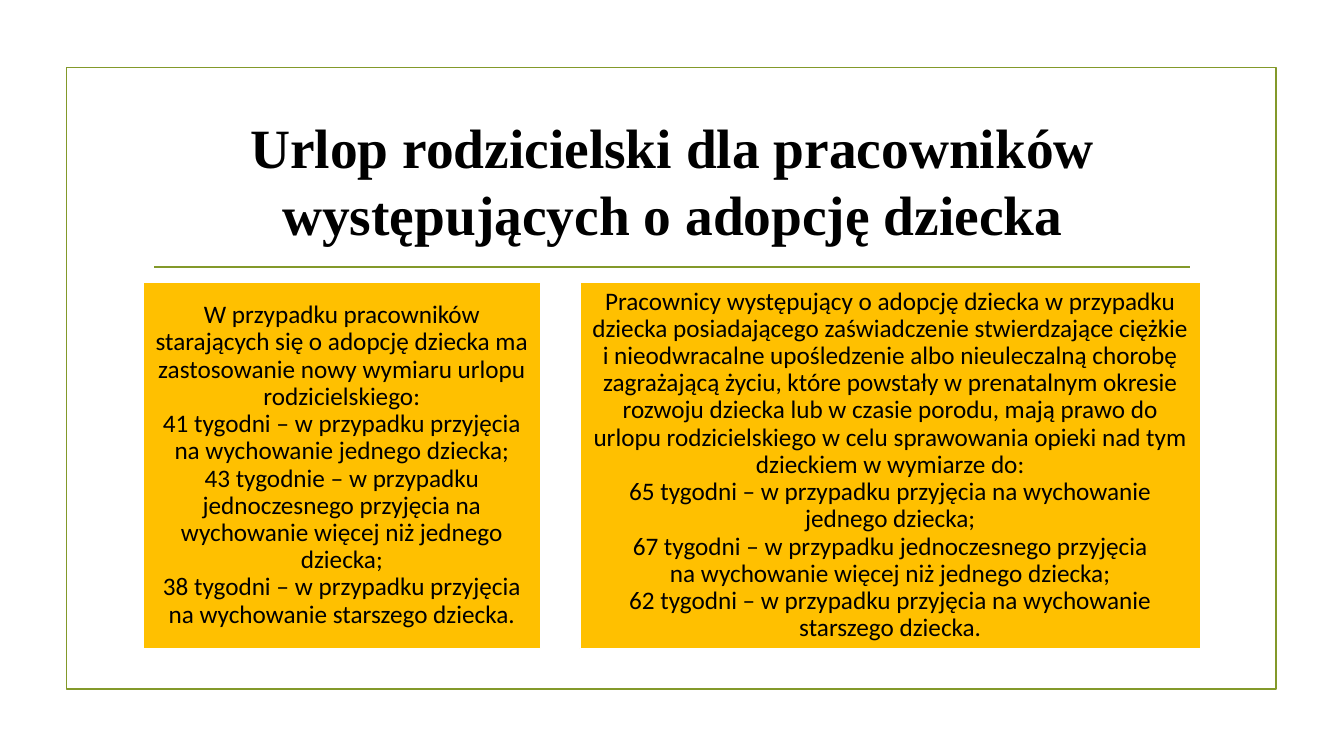
from pptx import Presentation
from pptx.dml.color import RGBColor
from pptx.enum.shapes import MSO_CONNECTOR, MSO_SHAPE
from pptx.enum.text import MSO_ANCHOR, PP_ALIGN
from pptx.oxml.ns import qn
from pptx.util import Cm, Pt
from lxml.etree import SubElement

TITLE = "Urlop rodzicielski dla pracowników występujących o adopcję dziecka"
# Each panel: width in cm, lines of text
PANELS = [
    (10.01, [
        "W przypadku pracowników starających się o adopcję dziecka ma zastosowanie "
        "nowy wymiaru urlopu rodzicielskiego:",
        "41 tygodni ‒ w przypadku przyjęcia na wychowanie jednego dziecka;",
        "43 tygodnie ‒ w przypadku jednoczesnego przyjęcia na wychowanie "
        "więcej niż jednego dziecka;",
        "38 tygodni ‒ w przypadku przyjęcia na wychowanie starszego dziecka.",
    ]),
    (15.65, [
        "Pracownicy występujący o adopcję dziecka w przypadku dziecka posiadającego "
        "zaświadczenie stwierdzające ciężkie i nieodwracalne upośledzenie albo "
        "nieuleczalną chorobę zagrażającą życiu, które powstały w prenatalnym okresie "
        "rozwoju dziecka lub w czasie porodu, mają prawo do urlopu rodzicielskiego "
        "w celu sprawowania opieki nad tym dzieckiem w wymiarze do:",
        "65 tygodni – w przypadku przyjęcia na wychowanie jednego dziecka;",
        "67 tygodni – w przypadku jednoczesnego przyjęcia",
        "na wychowanie więcej niż jednego dziecka;",
        "62 tygodni – w przypadku przyjęcia na wychowanie starszego dziecka.",
    ]),
]

GREEN = RGBColor(0x83, 0x99, 0x2A)
AMBER = RGBColor(0xFF, 0xC0, 0x00)
WHITE = RGBColor(0xFF, 0xFF, 0xFF)
BLACK = RGBColor(0x00, 0x00, 0x00)
LINE_WIDTH = Pt(1.25)
CONTENT_LEFT, CONTENT_WIDTH = 3.61, 26.67
PANEL_TOP, PANEL_HEIGHT, PANEL_GAP = 7.11, 9.23, 0.99


def add_rectangle(page, left, top, width, height, line_color):
    box = page.shapes.add_shape(
        MSO_SHAPE.RECTANGLE, Cm(left), Cm(top), Cm(width), Cm(height))
    box.shadow.inherit = False
    box.line.color.rgb = line_color
    box.line.width = LINE_WIDTH
    return box


def write_lines(box, lines, font_name, size, bold=False, spacing=1.0):
    """Fill the box with one centred paragraph, broken after each line."""
    frame = box.text_frame
    frame.word_wrap = True
    frame.vertical_anchor = MSO_ANCHOR.MIDDLE
    para = frame.paragraphs[0]
    para.alignment = PP_ALIGN.CENTER
    para.line_spacing = spacing
    for index, line in enumerate(lines):
        if index:
            para.add_line_break()
        span = para.add_run()
        span.text = line
        span.font.name = font_name
        span.font.size = Pt(size)
        span.font.bold = bold
        span.font.color.rgb = BLACK
    return frame


deck = Presentation()
deck.slide_width, deck.slide_height = Cm(33.87), Cm(19.05)
page = deck.slides.add_slide(deck.slide_layouts[6])

border = add_rectangle(page, 1.68, 1.7, 30.48, 15.67, GREEN)
border.fill.background()

rule = page.shapes.add_connector(
    MSO_CONNECTOR.STRAIGHT, Cm(3.89), Cm(6.73), Cm(30), Cm(6.73))
rule.line.color.rgb = GREEN
rule.line.width = LINE_WIDTH
SubElement(rule._element.spPr, qn("a:effectLst"))

title = page.shapes.add_textbox(
    Cm(CONTENT_LEFT), Cm(2.72), Cm(CONTENT_WIDTH), Cm(3.63))
write_lines(title, [TITLE], "Times New Roman", 39.6, bold=True)

left = CONTENT_LEFT
for width, lines in PANELS:
    panel = add_rectangle(page, left, PANEL_TOP, width, PANEL_HEIGHT, WHITE)
    panel.fill.solid()
    panel.fill.fore_color.rgb = AMBER
    frame = write_lines(panel, lines, "Calibri", 18, spacing=0.9)
    frame.margin_left = frame.margin_right = Cm(0.18)
    frame.margin_top = frame.margin_bottom = Cm(0.18)
    left += width + PANEL_GAP

deck.save("out.pptx")
